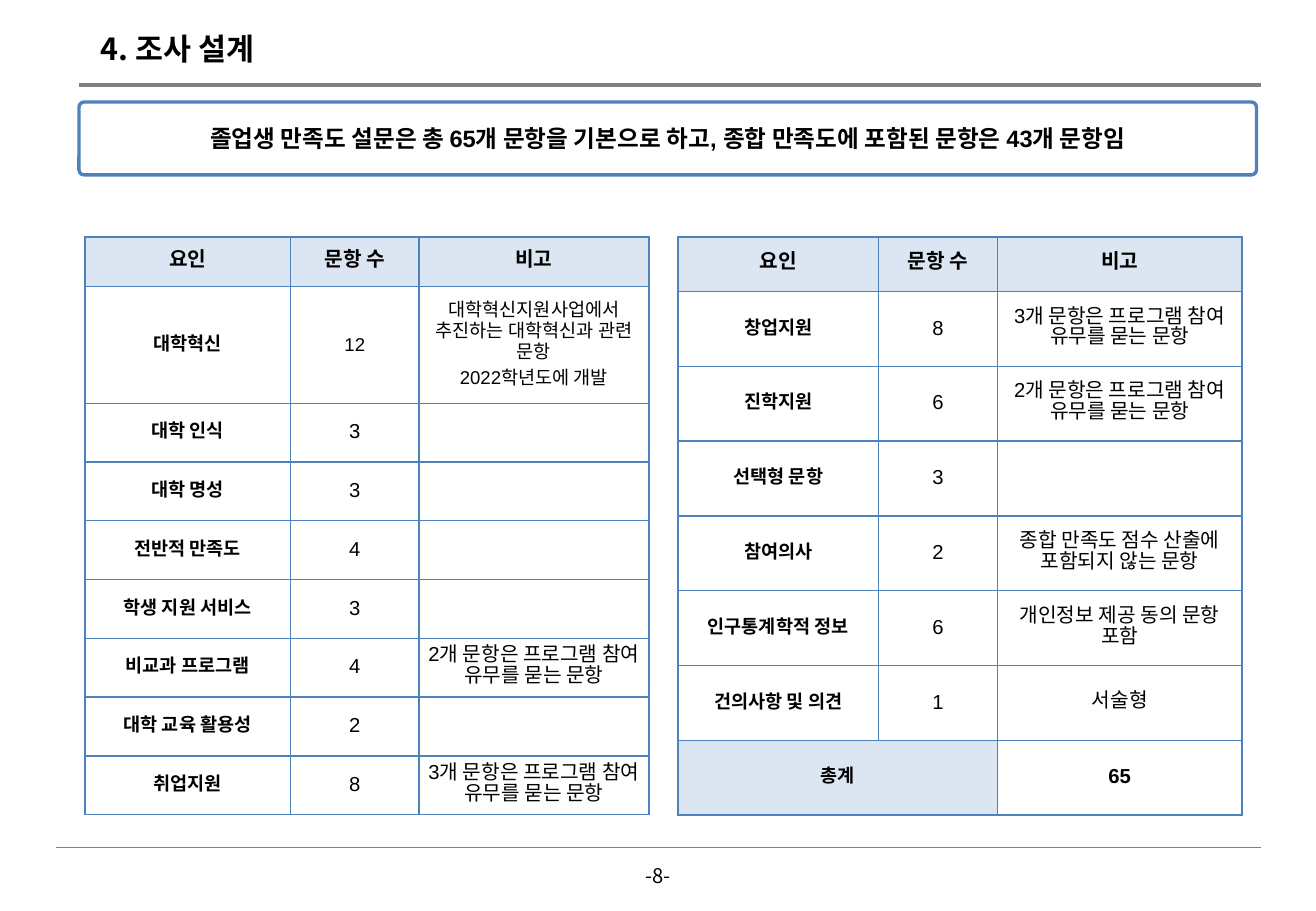
from lxml.etree import SubElement
from pptx import Presentation
from pptx.dml.color import RGBColor
from pptx.enum.shapes import MSO_CONNECTOR, MSO_SHAPE
from pptx.enum.text import MSO_ANCHOR, PP_ALIGN
from pptx.oxml.ns import qn
from pptx.util import Inches, Pt

BLACK = RGBColor(0, 0, 0)
WHITE = RGBColor(255, 255, 255)
GRAY = RGBColor(0x80, 0x80, 0x80)
BLUE = RGBColor(0x4F, 0x81, 0xBD)
PALE_BLUE = RGBColor(0xDC, 0xE6, 0xF2)
LATIN = "Arial"
KOREAN = "Noto Sans CJK KR"

HEADER = ("요인", "문항 수", "비고")
LEFT_ROWS = [
    ("대학혁신", "12", "대학혁신지원사업에서 추진하는 대학혁신과 관련 문항\n2022학년도에 개발"),
    ("대학 인식", "3", ""),
    ("대학 명성", "3", ""),
    ("전반적 만족도", "4", ""),
    ("학생 지원 서비스", "3", ""),
    ("비교과 프로그램", "4", "2개 문항은 프로그램 참여 유무를 묻는 문항"),
    ("대학 교육 활용성", "2", ""),
    ("취업지원", "8", "3개 문항은 프로그램 참여 유무를 묻는 문항"),
]
RIGHT_ROWS = [
    ("창업지원", "8", "3개 문항은 프로그램 참여 유무를 묻는 문항"),
    ("진학지원", "6", "2개 문항은 프로그램 참여 유무를 묻는 문항"),
    ("선택형 문항", "3", ""),
    ("참여의사", "2", "종합 만족도 점수 산출에 포함되지 않는 문항"),
    ("인구통계학적 정보", "6", "개인정보 제공 동의 문항 포함"),
    ("건의사항 및 의견", "1", "서술형"),
    ("총계", "", "65"),
]


def write(frame, text, size, bold=False, latin=LATIN, align=PP_ALIGN.CENTER, spacing=None):
    frame.text = text
    for index, para in enumerate(frame.paragraphs):
        para.alignment = align
        para.line_spacing = spacing
        para.space_before = Pt(3 if index else 0)
        for span in para.runs:
            span.font.size = Pt(size)
            span.font.bold = bold
            span.font.color.rgb = BLACK
            span.font.name = latin
            SubElement(span.font._element, qn("a:ea"), typeface=KOREAN)


def add_rule(page, left, top, right, weight):
    rule = page.shapes.add_connector(
        MSO_CONNECTOR.STRAIGHT, Inches(left), Inches(top), Inches(right), Inches(top))
    rule.line.color.rgb = GRAY
    rule.line.width = Pt(weight)
    SubElement(rule._element.spPr, qn("a:effectLst"))


def add_label(page, box, text, size, bold, align):
    label = page.shapes.add_textbox(*map(Inches, box))
    label.text_frame.word_wrap = False
    write(label.text_frame, text, size, bold, KOREAN, align)


def add_summary(page, box, text):
    banner = page.shapes.add_shape(MSO_SHAPE.ROUNDED_RECTANGLE, *map(Inches, box))
    banner.adjustments[0] = 0.07
    banner.shadow.inherit = False
    banner.fill.solid()
    banner.fill.fore_color.rgb = WHITE
    banner.line.color.rgb = BLUE
    banner.line.width = Pt(2)
    banner.text_frame.vertical_anchor = MSO_ANCHOR.MIDDLE
    write(banner.text_frame, text, 14, True)


def style_cell(cell, shaded):
    cell.vertical_anchor = MSO_ANCHOR.MIDDLE
    cell.margin_left = cell.margin_right = Inches(0.04)
    cell.margin_top = cell.margin_bottom = Inches(0.02)
    properties = cell._tc.get_or_add_tcPr()
    for side in ("a:lnL", "a:lnR", "a:lnT", "a:lnB"):
        border = SubElement(properties, qn(side), w=str(Pt(1)))
        fill = SubElement(border, qn("a:solidFill"))
        SubElement(fill, qn("a:srgbClr"), val=str(BLUE))
    if shaded:
        cell.fill.solid()
        cell.fill.fore_color.rgb = PALE_BLUE
    else:
        cell.fill.background()


def add_question_table(page, box, widths, heights, rows):
    grid = page.shapes.add_table(len(rows) + 1, len(widths), *map(Inches, box)).table
    grid.first_row = grid.horz_banding = False
    for column, width in zip(grid.columns, widths):
        column.width = Inches(width)
    for row, height in zip(grid.rows, heights):
        row.height = Inches(height)
    for row_index, values in enumerate([HEADER, *rows]):
        header = row_index == 0
        total = values[0] == "총계"
        compact = values[0] == "대학혁신"
        for column_index, value in enumerate(values):
            cell = grid.cell(row_index, column_index)
            name = column_index == 0
            style_cell(cell, header or (total and column_index < 2))
            if value:
                size = 11 if compact or (name and not header) else 12
                write(cell.text_frame, value, size, header or total or name, spacing=Pt(12.4))
        if total:
            grid.cell(row_index, 0).merge(grid.cell(row_index, 1))


def build_survey_design(page):
    add_rule(page, 0.65, 0.7, 10.38, 2)
    add_rule(page, 0.46, 6.98, 10.38, 0.5)
    add_label(page, (0.73, 0.2, 1.6, 0.4), "4. 조사 설계", 18, True, PP_ALIGN.LEFT)
    add_label(page, (5.14, 7.06, 0.55, 0.3), "-8-", 12, False, PP_ALIGN.CENTER)
    add_summary(page, (0.65, 0.84, 9.69, 0.6),
                "졸업생 만족도 설문은 총 65개 문항을 기본으로 하고, 종합 만족도에 포함된 문항은 43개 문항임")
    add_question_table(page, (0.7, 1.95, 4.64, 4.76), (1.69, 1.06, 1.89),
                       [0.41, 0.96] + [0.484] * 7, LEFT_ROWS)
    add_question_table(page, (5.58, 1.95, 4.64, 4.76), (1.65, 0.98, 2.01),
                       [0.45] + [0.616] * 7, RIGHT_ROWS)


def main():
    deck = Presentation()
    deck.slide_width = Inches(10.83)
    deck.slide_height = Inches(7.5)
    build_survey_design(deck.slides.add_slide(deck.slide_layouts[6]))
    deck.save("out.pptx")


if __name__ == "__main__":
    main()
